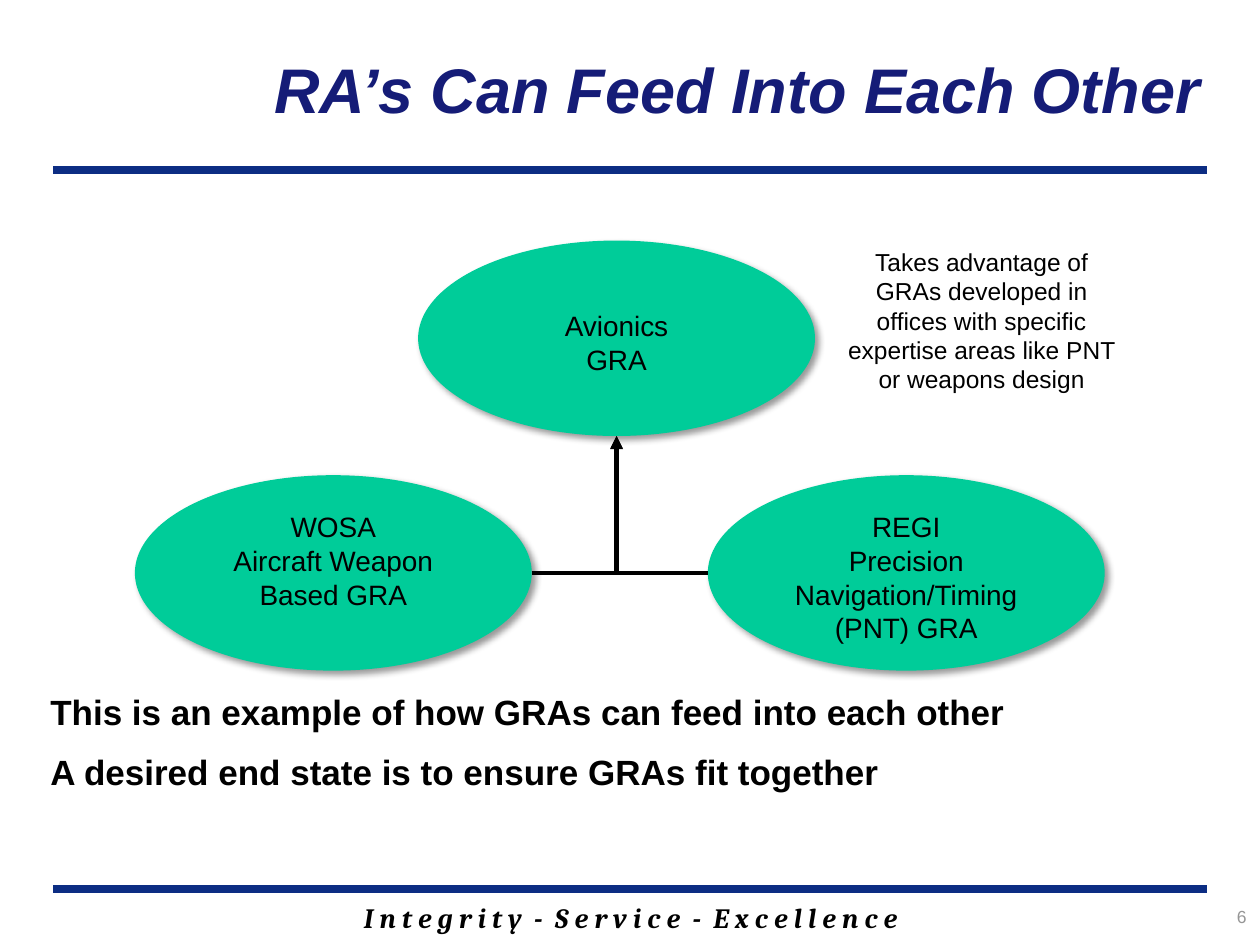
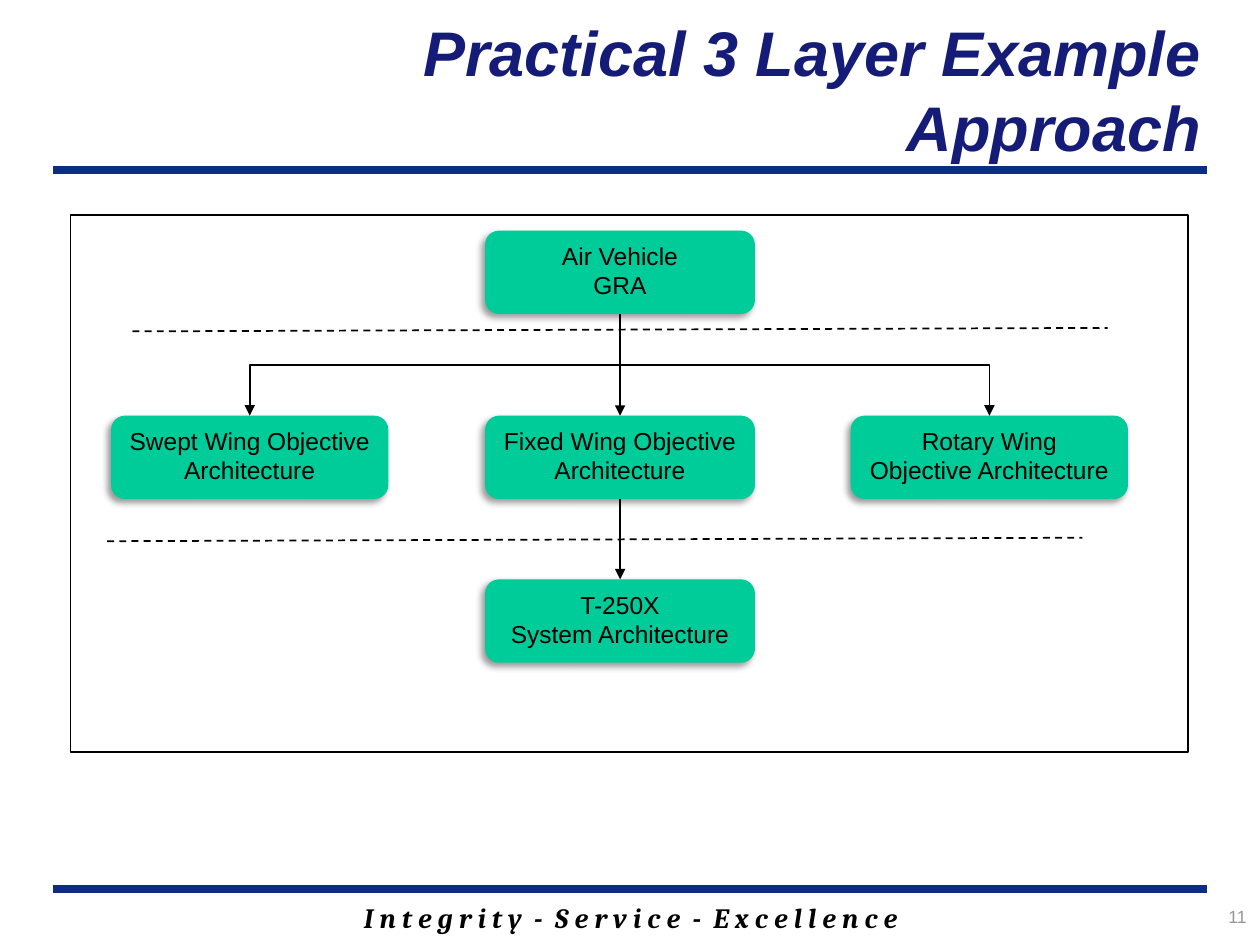
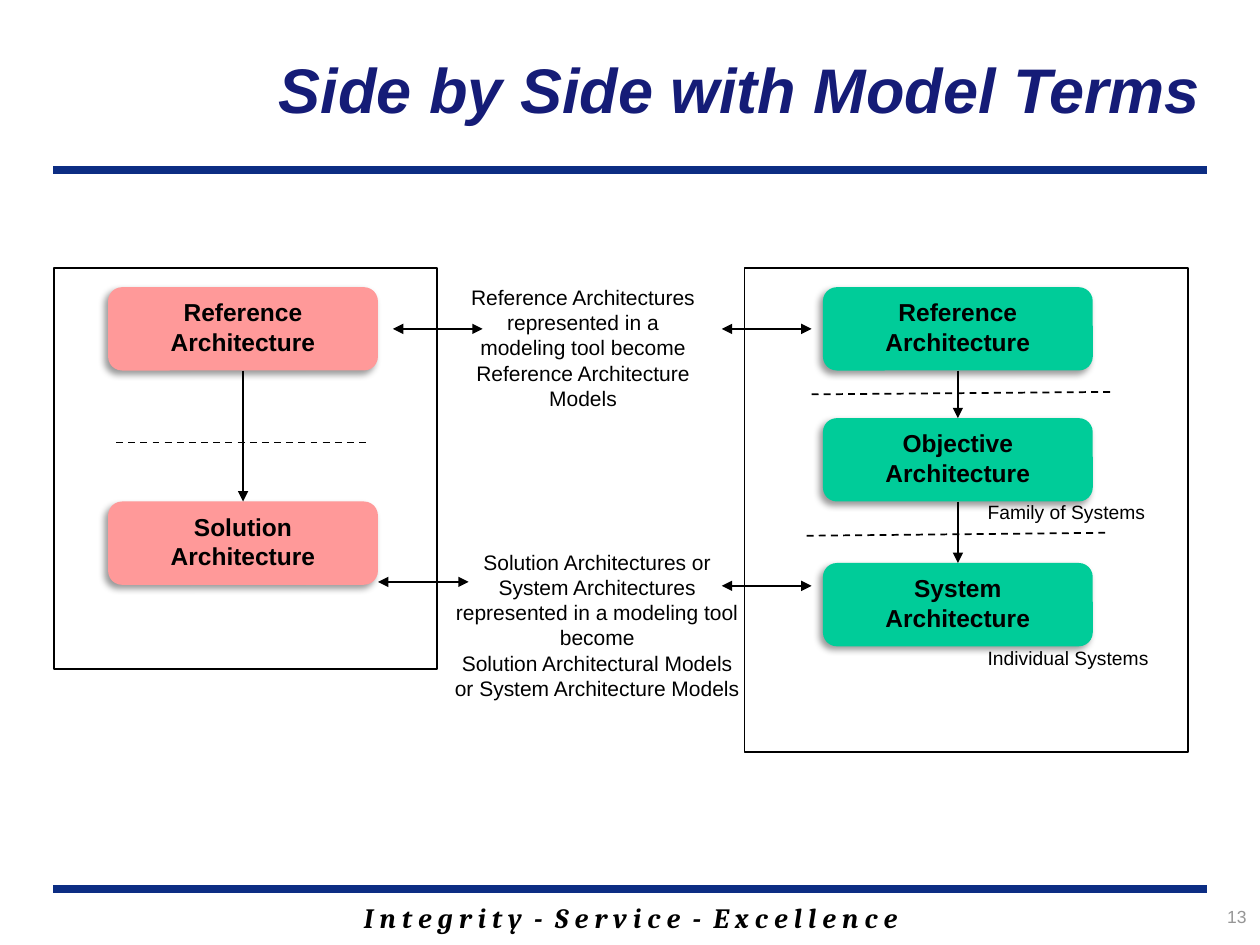
from dataclasses import dataclass

from lxml.etree import SubElement
from pptx import Presentation
from pptx.dml.color import RGBColor
from pptx.enum.dml import MSO_LINE
from pptx.enum.shapes import MSO_CONNECTOR, MSO_SHAPE
from pptx.enum.text import MSO_ANCHOR, MSO_AUTO_SIZE, PP_ALIGN
from pptx.oxml.ns import qn
from pptx.util import Cm, Pt


@dataclass(frozen=True)
class TextStyle:
    size: float
    color: str = "000000"
    bold: bool = False
    italic: bool = False
    font: str = "Arial"
    align: PP_ALIGN = PP_ALIGN.CENTER


@dataclass(frozen=True)
class Theme:
    rule: str = "0C2D83"
    ink: str = "000000"
    green: str = "00CC99"
    red: str = "FF9999"
    title: TextStyle = TextStyle(36, "151C77", True, True, align=PP_ALIGN.RIGHT)
    body: TextStyle = TextStyle(20, bold=True, align=PP_ALIGN.LEFT)
    motto: TextStyle = TextStyle(16, bold=True, italic=True, font="Cambria")
    number: TextStyle = TextStyle(10, "969696", align=PP_ALIGN.RIGHT)
    ellipse: TextStyle = TextStyle(16)
    block: TextStyle = TextStyle(14)
    term: TextStyle = TextStyle(14, bold=True)
    note: TextStyle = TextStyle(12)
    label: TextStyle = TextStyle(11, align=PP_ALIGN.LEFT)


THEME = Theme()
TITLE_AND_BODY, TITLE_ONLY = 1, 5
BLOCK_WIDTH, BLOCK_HEIGHT = 5.44, 1.68


def point(x, y):
    return Cm(x), Cm(y)


def top_of(shape):
    return shape.left + shape.width // 2, shape.top


def bottom_of(shape):
    return shape.left + shape.width // 2, shape.top + shape.height


def write(text_frame, text, style):
    text_frame.text = text
    text_frame.auto_size = MSO_AUTO_SIZE.NONE
    for paragraph in text_frame.paragraphs:
        paragraph.alignment = style.align
        for run in paragraph.runs:
            font = run.font
            font.name, font.size = style.font, Pt(style.size)
            font.bold, font.italic = style.bold, style.italic
            font.color.rgb = RGBColor.from_string(style.color)


def place(shape, left, top, width, height):
    shape.left, shape.top = point(left, top)
    shape.width, shape.height = point(width, height)


class Deck:
    def __init__(self, theme):
        self.theme = theme
        self.presentation = Presentation()
        self.presentation.slide_width = Cm(25.4)
        self.presentation.slide_height = Cm(19.05)
        self.slide = None

    def add_slide(self, title, number, layout=TITLE_ONLY):
        first = self.slide is None
        self.slide = self.presentation.slides.add_slide(
            self.presentation.slide_layouts[layout])
        if first:
            self.add_master_parts()
        placeholder = self.slide.shapes.title
        place(placeholder, 4.62, 0.2, 19.84, 3.18)
        write(placeholder.text_frame, title, self.theme.title)
        placeholder.text_frame.vertical_anchor = MSO_ANCHOR.MIDDLE
        self.text(str(number), (22.2, 18.14, 3.18, 0.84), self.theme.number)

    def add_master_parts(self):
        """Draw the rules and the motto, then move them to the slide master."""
        parts = [self.line(point(1.07, y), point(24.33, y), 4.5, color=self.theme.rule)
                 for y in (3.43, 17.93)]
        parts.append(self.text("I n t e g r i t y  -  S e r v i c e  -  E x c e l l e n c e",
                               (3.61, 18.03, 18.21, 0.94), self.theme.motto))
        for part in parts:
            self.presentation.slide_master.shapes.element.append(part.element)

    def body(self, text, box):
        placeholder = self.slide.placeholders[1]
        place(placeholder, *box)
        write(placeholder.text_frame, text, self.theme.body)
        for index, paragraph in enumerate(placeholder.text_frame.paragraphs):
            paragraph.space_before = Pt(10 if index else 0)
            properties = paragraph._p.get_or_add_pPr()
            properties.set("marL", "0")
            properties.set("indent", "0")
            SubElement(properties, qn("a:buNone"))

    def text(self, text, box, style, wrap=True):
        shape = self.slide.shapes.add_textbox(*map(Cm, box))
        write(shape.text_frame, text, style)
        shape.text_frame.word_wrap = wrap
        return shape

    def filled(self, kind, text, box, fill, style, shadow_angle):
        shape = self.slide.shapes.add_shape(kind, *map(Cm, box))
        shape.fill.solid()
        shape.fill.fore_color.rgb = RGBColor.from_string(fill)
        shape.line.fill.background()
        write(shape.text_frame, text, style)
        shape.text_frame.vertical_anchor = MSO_ANCHOR.TOP
        shape.shadow.inherit = False
        effects = shape.element.spPr.find(qn("a:effectLst"))
        shadow = SubElement(effects, qn("a:outerShdw"), blurRad=str(Pt(4)),
                            dist=str(Pt(3)), dir=str(shadow_angle * 60000),
                            algn="tl" if shadow_angle < 90 else "tr", rotWithShape="0")
        color = SubElement(shadow, qn("a:srgbClr"), val=self.theme.ink)
        SubElement(color, qn("a:alpha"), val="40000")
        return shape

    def ellipse(self, text, left, top):
        return self.filled(MSO_SHAPE.OVAL, text, (left, top, 8, 3.94),
                           self.theme.green, self.theme.ellipse, 45)

    def block(self, text, left, top, style, fill=THEME.green, width=BLOCK_WIDTH):
        return self.filled(MSO_SHAPE.ROUNDED_RECTANGLE, text,
                           (left, top, width, BLOCK_HEIGHT), fill, style, 135)

    def frame(self, *box):
        shape = self.slide.shapes.add_shape(MSO_SHAPE.RECTANGLE, *map(Cm, box))
        shape.fill.background()
        shape.line.color.rgb = RGBColor.from_string(self.theme.ink)
        shape.line.width = Pt(1)
        shape.shadow.inherit = False

    def line(self, begin, end, width=1, dashed=False, ends=(), color=THEME.ink,
             kind=MSO_CONNECTOR.STRAIGHT):
        connector = self.slide.shapes.add_connector(kind, *begin, *end)
        connector.line.color.rgb = RGBColor.from_string(color)
        connector.line.width = Pt(width)
        if dashed:
            connector.line.dash_style = MSO_LINE.DASH
        properties = connector.element.spPr
        for end_name in ends:
            SubElement(properties.find(qn("a:ln")), qn(f"a:{end_name}"), type="triangle")
        SubElement(properties, qn("a:effectLst"))
        return connector

    def arrow(self, begin, end, width=1):
        self.line(begin, end, width, ends=("tailEnd",))

    def double_arrow(self, left, right, y):
        self.line(point(left, y), point(right, y), ends=("headEnd", "tailEnd"))

    def divider(self, begin, end):
        self.line(point(*begin), point(*end), dashed=True)

    def elbow(self, begin, end, width, rotation, preset):
        """Draw a bent arrow from its unrotated ends, turned about its centre."""
        connector = self.line(begin, end, width, ends=("tailEnd",), kind=MSO_CONNECTOR.ELBOW)
        properties = connector.element.spPr
        properties.find(qn("a:prstGeom")).set("prst", preset)
        if rotation:
            properties.find(qn("a:xfrm")).set("rot", str(rotation * 60000))

    def branch(self, begin, end):
        """Draw an arrow that goes down, sideways, then down again."""
        center_x, center_y = (begin[0] + end[0]) // 2, (begin[1] + end[1]) // 2
        half_across, half_down = abs(end[0] - begin[0]) // 2, (end[1] - begin[1]) // 2
        to_right = end[0] > begin[0]
        reach = half_down if to_right else -half_down
        self.elbow((center_x + reach, center_y - half_across),
                   (center_x - reach, center_y + half_across),
                   1, 270 if to_right else 90, "bentConnector3")


def add_feeding_slide(deck):
    deck.add_slide("RA’s Can Feed Into Each Other", 6, TITLE_AND_BODY)
    deck.body("This is an example of how GRAs can feed into each other\n"
              "A desired end state is to ensure GRAs fit together", (0.76, 13.8, 23.32, 3.5))
    avionics = deck.ellipse("Avionics\nGRA", 8.43, 4.85)
    avionics.text_frame.margin_top = Cm(0.8)
    navigation = deck.ellipse("REGI\nPrecision Navigation/Timing (PNT) GRA", 14.27, 9.58)
    weapons = deck.ellipse("WOSA\nAircraft Weapon Based GRA", 2.72, 9.58)
    target = bottom_of(avionics)
    middle = weapons.top + weapons.height // 2
    deck.elbow((weapons.left + weapons.width, middle), target, 2.5, 0, "bentConnector2")
    deck.elbow(target, (navigation.left, middle), 2.25, 180, "bentConnector2")
    deck.text("Takes advantage of GRAs developed in offices with specific expertise areas "
              "like PNT or weapons design", (16.69, 4.85, 6.2, 3.25), deck.theme.note_large
              if hasattr(deck.theme, "note_large") else deck.theme.block)


def add_layers_slide(deck):
    style = deck.theme.block
    deck.add_slide("Practical 3 Layer Example Approach", 11)
    vehicle = deck.block("Air Vehicle\nGRA", 9.78, 4.65, style)
    swept = deck.block("Swept Wing Objective Architecture", 2.24, 8.38, style, width=5.59)
    system = deck.block("T-250X\nSystem Architecture", 9.78, 11.68, style)
    deck.divider((2.67, 6.68), (22.33, 6.61))
    deck.frame(1.42, 4.34, 22.53, 10.82)
    fixed = deck.block("Fixed Wing Objective Architecture", 9.78, 8.38, style)
    rotary = deck.block("Rotary Wing Objective Architecture", 17.15, 8.38, style, width=5.59)
    for outer in (rotary, swept):
        deck.branch(bottom_of(vehicle), top_of(outer))
    deck.arrow(bottom_of(vehicle), top_of(fixed))
    deck.divider((2.16, 10.91), (21.82, 10.84))
    deck.arrow(bottom_of(fixed), top_of(system))


def add_terms_slide(deck):
    theme = deck.theme
    deck.add_slide("Side by Side with Model Terms", 13)

    reference, objective, system = [
        deck.block(text, 16.59, top, theme.term)
        for text, top in (("Reference Architecture", 5.79),
                          ("Objective Architecture", 8.43),
                          ("System\nArchitecture", 11.35))]
    deck.arrow(bottom_of(reference), top_of(objective))
    deck.arrow(bottom_of(objective), top_of(system))
    deck.divider((16.36, 7.95), (22.43, 7.9))
    deck.divider((16.26, 10.8), (22.33, 10.74))
    deck.frame(15.01, 5.41, 8.94, 9.75)
    for text, top in (("Family of Systems", 9.96), ("Individual Systems", 12.9)):
        deck.text(text, (19.66, top, 3.78, 0.74), theme.label, wrap=False)

    reference, solution = [
        deck.block(text, 2.18, top, theme.term, theme.red)
        for text, top in (("Reference Architecture", 5.79),
                          ("Solution Architecture", 10.11))]
    deck.arrow(bottom_of(reference), top_of(solution), 1.5)
    deck.divider((2.34, 8.92), (7.44, 8.92))
    deck.frame(1.09, 5.41, 7.72, 8.08)

    deck.text("Reference Architectures represented in a modeling tool become "
              "Reference Architecture Models", (9.14, 5.61, 5.23, 2.82), theme.note)
    deck.text("Solution Architectures or System Architectures represented in a modeling tool\n"
              "become\nSolution Architectural Models or System Architecture Models",
              (8.92, 10.95, 6.24, 3.84), theme.note)
    for left, right, y in ((14.55, 16.36, 6.63), (7.92, 9.73, 6.63),
                           (7.62, 9.45, 11.73), (14.55, 16.36, 11.81)):
        deck.double_arrow(left, right, y)


def main():
    deck = Deck(THEME)
    add_feeding_slide(deck)
    add_layers_slide(deck)
    add_terms_slide(deck)
    deck.presentation.save("out.pptx")


if __name__ == "__main__":
    main()
